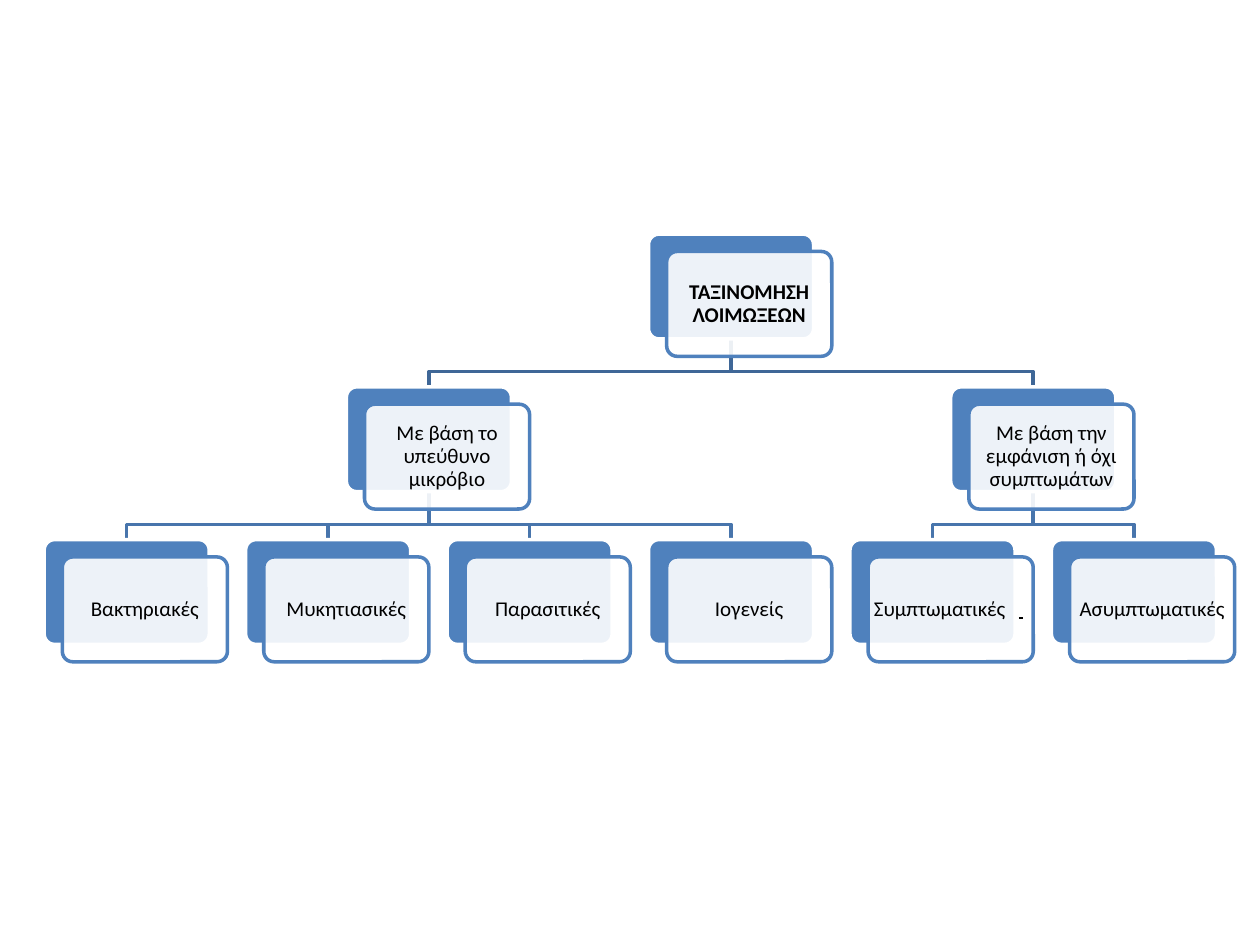
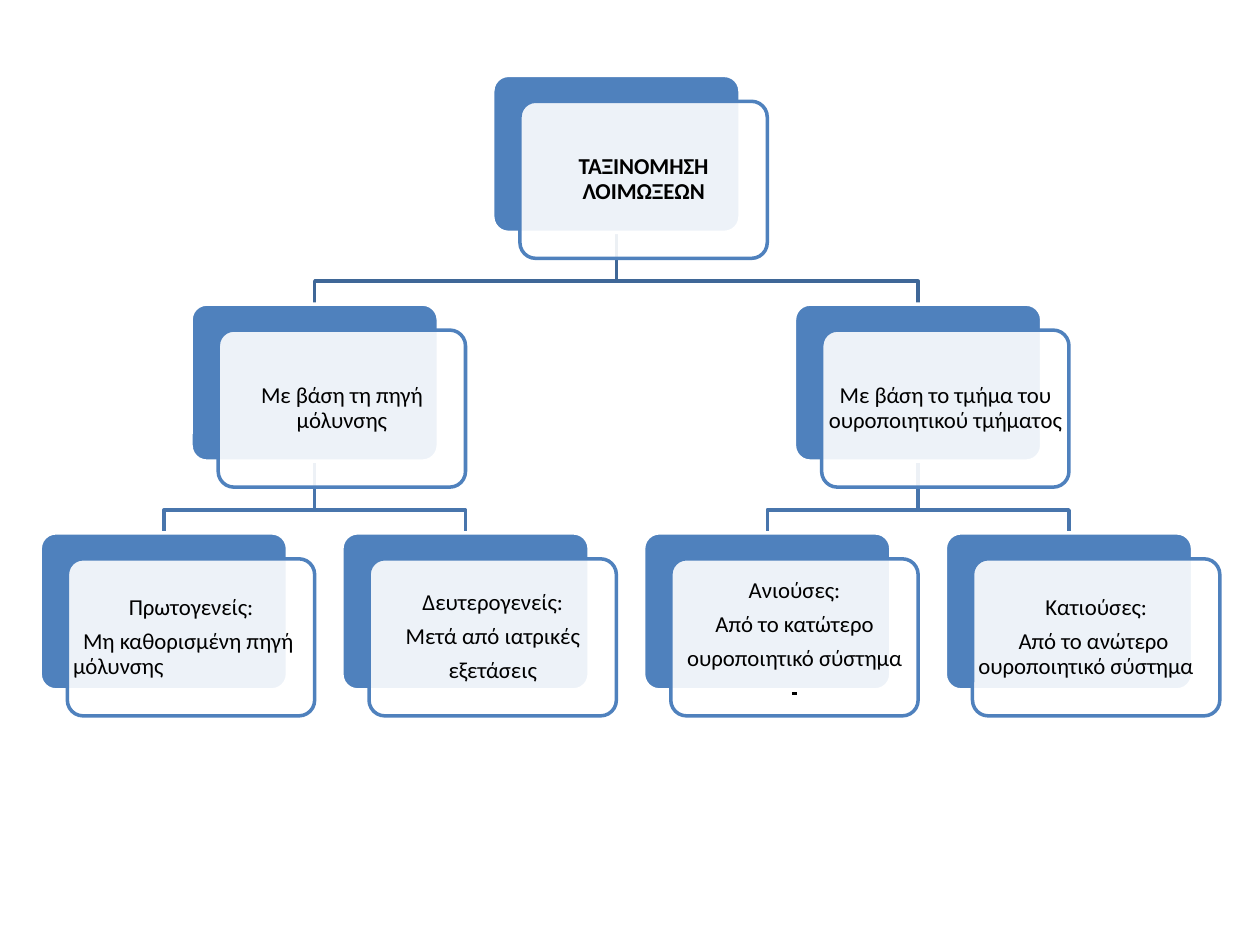
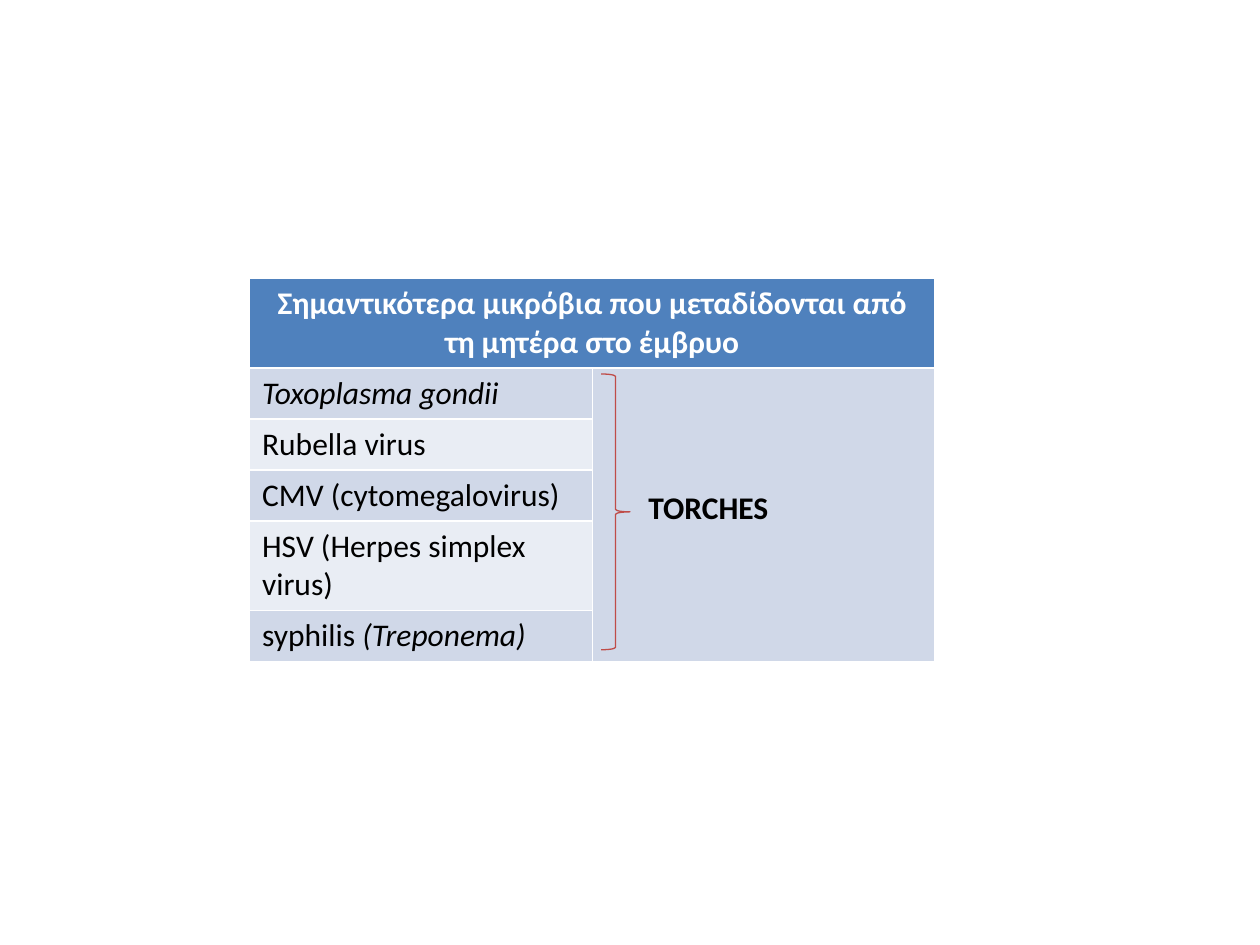
import dataclasses
import itertools

import pptx
import pptx.dml.color
import pptx.enum.shapes
import pptx.enum.text
import pptx.oxml
import pptx.oxml.ns
import pptx.util

Cm = pptx.util.Cm
Pt = pptx.util.Pt
SHAPES = pptx.enum.shapes.MSO_SHAPE
ALIGN = pptx.enum.text.PP_ALIGN


@dataclasses.dataclass(frozen=True)
class Theme:
    """Colours, type sizes and line widths of the deck."""
    font: str = "Calibri"
    accent: str = "4F81BD"
    white: str = "FFFFFF"
    ink: str = "000000"
    brace: str = "BF4C48"
    branches: tuple = ("3F6797", "4875AC")
    bands: tuple = ("D0D8E8", "E9EDF4")
    card_opacity: int = 90
    line: float = 2
    thin_line: float = 0.75
    small: int = 12
    medium: int = 13
    large: int = 18


THEME = Theme()


@dataclasses.dataclass
class Line:
    """A paragraph of a card; an underlined blank may follow the words."""
    words: str
    bold: bool = False
    indent: float = 0
    tab: float = 0
    marked: bool = False


@dataclasses.dataclass
class Topic:
    """A card of the tree with its subtopics and its place in the grid."""
    lines: list
    subtopics: list = dataclasses.field(default_factory=list)
    slot: float = 0
    level: int = 0


@dataclasses.dataclass(frozen=True)
class Box:
    """A region of a slide, in centimetres."""
    left: float
    top: float
    width: float
    height: float = 0


INFECTIONS = "ΤΑΞΙΝΟΜΗΣΗ ΛΟΙΜΩΞΕΩΝ"

BY_MICROBE = Topic([Line(INFECTIONS, bold=True)], [
    Topic([Line("Με βάση το υπεύθυνο μικρόβιο")], [
        Topic([Line(kind)])
        for kind in ("Βακτηριακές", "Μυκητιασικές", "Παρασιτικές", "Ιογενείς")]),
    Topic([Line("Με βάση την εμφάνιση ή όχι συμπτωμάτων")], [
        Topic([Line("Συμπτωματικές\t", tab=2.92, marked=True)]),
        Topic([Line("Ασυμπτωματικές")])]),
])

BY_SOURCE = Topic([Line(INFECTIONS, bold=True)], [
    Topic([Line("Με βάση τη πηγή μόλυνσης")], [
        Topic([Line("Πρωτογενείς:"),
               Line("Μη καθορισμένη πηγή μόλυνσης", indent=0.2)]),
        Topic([Line("Δευτερογενείς:"), Line("Μετά από ιατρικές"),
               Line("εξετάσεις")])]),
    Topic([Line("Με βάση το τμήμα του ουροποιητικού τμήματος")], [
        Topic([Line("Ανιούσες:"), Line("Από το κατώτερο"),
               Line("ουροποιητικό σύστημα\v", marked=True)]),
        Topic([Line("Κατιούσες:"),
               Line("Από το ανώτερο ουροποιητικό σύστημα", indent=0.81)])]),
])

MICROBES_TITLE = "Σημαντικότερα μικρόβια που μεταδίδονται από τη μητέρα στο έμβρυο"
MICROBES = [
    [("Toxoplasma gondii", True)],
    [("Rubella virus", False)],
    [("CMV (cytomegalovirus)", False)],
    [("HSV (Herpes simplex virus)", False)],
    [("syphilis ", False), ("(Treponema)", True)],
]


def rgb(code):
    """Turn a hex code into a colour."""
    return pptx.dml.color.RGBColor.from_string(code)


def style_font(font, size, color, bold=False):
    """Set the typeface, size, colour and weight."""
    font.name = THEME.font
    font.size = Pt(size)
    font.color.rgb = rgb(color)
    font.bold = bold


def paint(shape, line_color, line_width, fill=None, opacity=None):
    """Give a shape its outline and its fill, without a shadow."""
    shape.shadow.inherit = False
    shape.line.color.rgb = rgb(line_color)
    shape.line.width = Pt(line_width)
    if fill is None:
        shape.fill.background()
        return
    shape.fill.solid()
    shape.fill.fore_color.rgb = rgb(fill)
    if opacity:
        qn = pptx.oxml.ns.qn
        color = shape._element.spPr.find(f"{qn('a:solidFill')}/{qn('a:srgbClr')}")
        color.append(pptx.oxml.parse_xml(
            f'<a:alpha {pptx.oxml.ns.nsdecls("a")} val="{opacity * 1000}"/>'))


def write_line(paragraph, line, size):
    """Write one line of a card into a paragraph."""
    paragraph.text = line.words
    paragraph.alignment = ALIGN.LEFT if line.indent or line.tab else ALIGN.CENTER
    paragraph.line_spacing = 0.9
    paragraph.space_after = Pt(round(size * 0.42, 1))
    properties = paragraph._p.get_or_add_pPr()
    if line.indent:
        properties.set("indent", str(Cm(line.indent)))
    if line.tab:
        properties.append(pptx.oxml.parse_xml(
            f'<a:tabLst {pptx.oxml.ns.nsdecls("a")}>'
            f'<a:tab pos="{Cm(line.tab)}" algn="l"/></a:tabLst>'))
    for run in paragraph.runs:
        style_font(run.font, size, THEME.ink, line.bold)
    if line.marked:
        mark = paragraph.add_run()
        mark.text = " "
        style_font(mark.font, size, THEME.ink, bold=True)
        mark.font.underline = True


def add_card(slide, box, lines, size):
    """Draw a solid card with a translucent card of text shifted over it."""
    shift_x, shift_y = box.width * 0.11, box.width * 0.105
    back, front = (
        slide.shapes.add_shape(SHAPES.ROUNDED_RECTANGLE, Cm(box.left + dx),
                               Cm(box.top + dy), Cm(box.width), Cm(box.height))
        for dx, dy in ((0, 0), (shift_x, shift_y)))
    for card in (back, front):
        card.adjustments[0] = 0.1
    paint(back, THEME.white, THEME.line, THEME.accent)
    paint(front, THEME.accent, THEME.line, THEME.white, THEME.card_opacity)

    frame = front.text_frame
    frame.word_wrap = True
    frame.vertical_anchor = pptx.enum.text.MSO_ANCHOR.MIDDLE
    inset = Cm(0.12 - 0.03 * box.height)
    frame.margin_left = frame.margin_right = inset
    frame.margin_top = frame.margin_bottom = inset
    frame.text = "\n".join("" for _ in lines)
    for paragraph, line in zip(frame.paragraphs, lines):
        write_line(paragraph, line, size)


def add_branch(slide, parent, child, color):
    """Draw the bent line from the foot of one card to the top of another."""
    start_x, start_y = parent.left + parent.width / 2, parent.top + parent.height
    end_x = child.left + child.width / 2
    bend_y = start_y + (child.top - start_y) * 0.68
    outline = slide.shapes.build_freeform(Cm(start_x), Cm(start_y))
    outline.add_line_segments(
        [(Cm(x), Cm(y)) for x, y in
         ((start_x, bend_y), (end_x, bend_y), (end_x, child.top))], close=False)
    paint(outline.convert_to_shape(), color, THEME.line)


def assign_slots(topic, free_slots, level=0):
    """Put leaves in successive slots and every parent midway over its own."""
    topic.level = level
    for subtopic in topic.subtopics:
        assign_slots(subtopic, free_slots, level + 1)
    if topic.subtopics:
        topic.slot = (topic.subtopics[0].slot + topic.subtopics[-1].slot) / 2
    else:
        topic.slot = next(free_slots)


def walk(topic):
    """Yield a topic and everything below it."""
    yield topic
    for subtopic in topic.subtopics:
        yield from walk(subtopic)


def add_tree(slide, box, root, size):
    """Draw a tree of cards that fills the width of the box."""
    assign_slots(root, itertools.count())
    topics = list(walk(root))
    last_slot = max(topic.slot for topic in topics)
    card_width = box.width / (1.22 * last_slot + 1.11)

    def card_box(topic):
        """Return the box of a topic's solid card."""
        return Box(box.left + topic.slot * card_width * 1.22,
                   box.top + topic.level * card_width * 0.925,
                   card_width, card_width * 0.635)

    for topic in topics:
        for subtopic in topic.subtopics:
            add_branch(slide, card_box(topic), card_box(subtopic),
                       THEME.branches[topic.level])
    for topic in topics:
        add_card(slide, card_box(topic), topic.lines, size)


def fill_cell(cell, fill, runs, color=THEME.ink, bold=False):
    """Fill a cell and write its runs of (words, italic)."""
    cell.fill.solid()
    cell.fill.fore_color.rgb = rgb(fill)
    paragraph = cell.text_frame.paragraphs[0]
    for words, italic in runs:
        run = paragraph.add_run()
        run.text = words
        style_font(run.font, THEME.large, color, bold)
        run.font.italic = italic


def add_microbes(slide, box):
    """Draw the table of microbes and the brace that gathers them."""
    table = slide.shapes.add_table(
        len(MICROBES) + 1, 2, Cm(box.left), Cm(box.top),
        Cm(box.width), Cm(box.height)).table
    title, acronym = table.cell(0, 0), table.cell(1, 1)
    title.merge(table.cell(0, 1))
    acronym.merge(table.cell(len(MICROBES), 1))
    fill_cell(title, THEME.accent, [(MICROBES_TITLE, False)], THEME.white, bold=True)
    title.text_frame.paragraphs[0].alignment = ALIGN.CENTER
    for row, (runs, band) in enumerate(zip(MICROBES, itertools.cycle(THEME.bands)), 1):
        fill_cell(table.cell(row, 0), band, runs)
    fill_cell(acronym, THEME.bands[0], [("TORCHES", False)], bold=True)
    acronym.margin_left, acronym.margin_top = Cm(1.13), Cm(2.46)

    brace = slide.shapes.add_shape(
        SHAPES.RIGHT_BRACE, Cm(box.left + box.width / 2 + 0.18),
        Cm(box.top + 1.93), Cm(0.58), Cm(5.56))
    paint(brace, THEME.brace, THEME.thin_line)


def main():
    """Build the three slides and save them."""
    deck = pptx.Presentation()
    deck.slide_width, deck.slide_height = Cm(25.4), Cm(19.05)
    blank = deck.slide_layouts[6]
    add_tree(deck.slides.add_slide(blank), Box(0.89, 4.72, 24), BY_MICROBE, THEME.small)
    add_tree(deck.slides.add_slide(blank), Box(0.81, 1.52, 23.78), BY_SOURCE, THEME.medium)
    add_microbes(deck.slides.add_slide(blank), Box(5.03, 5.61, 13.82, 6.18))
    deck.save("out.pptx")


if __name__ == "__main__":
    main()
